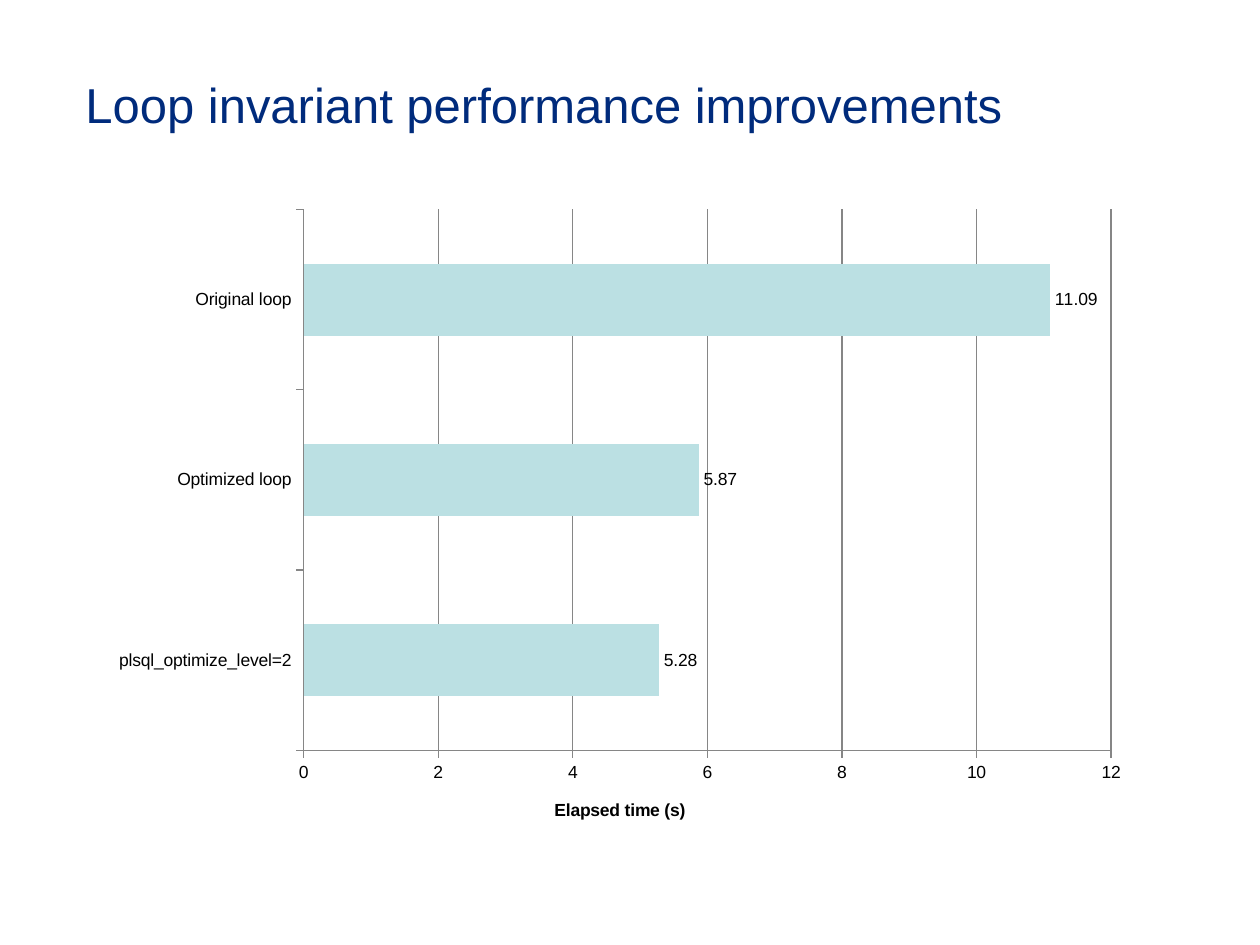
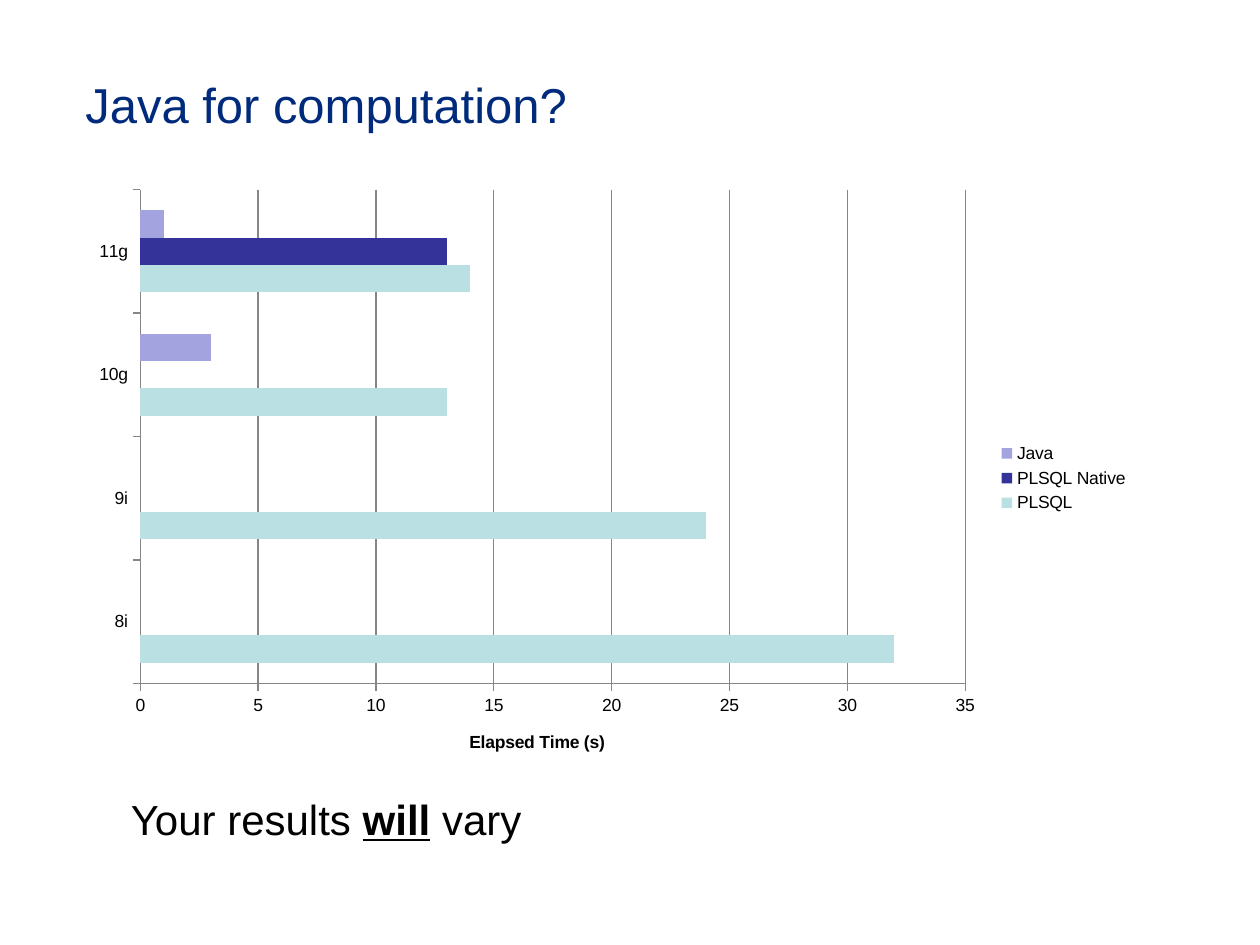
"""Build two slides of horizontal bar charts on loop and Java timings."""
from dataclasses import dataclass
from typing import Optional

from pptx import Presentation
from pptx.chart.data import CategoryChartData
from pptx.dml.color import RGBColor
from pptx.enum.chart import XL_CHART_TYPE, XL_LABEL_POSITION, XL_LEGEND_POSITION, XL_TICK_MARK
from pptx.enum.text import MSO_ANCHOR
from pptx.util import Inches, Pt

BAR_CLUSTERED = XL_CHART_TYPE.BAR_CLUSTERED
OUTSIDE_END = XL_LABEL_POSITION.OUTSIDE_END
LEGEND_RIGHT = XL_LEGEND_POSITION.RIGHT
TICK_OUTSIDE = XL_TICK_MARK.OUTSIDE
ANCHOR_TOP = MSO_ANCHOR.TOP

FONT = "Arial"
COLORS = {
    "title": "002B7C",
    "text": "000000",
    "axis": "868686",
    "aqua": "BBE0E3",
    "navy": "333399",
    "lilac": "A3A3E0",
}


@dataclass(frozen=True)
class Box:
    left: float
    top: float
    width: float
    height: float

    def lengths(self) -> tuple:
        return tuple(Inches(v) for v in (self.left, self.top, self.width, self.height))


@dataclass(frozen=True)
class Run:
    text: str
    emphasized: bool = False


@dataclass(frozen=True)
class Timing:
    name: str
    seconds: tuple[Optional[float], ...]
    color: str


@dataclass(frozen=True)
class TimingChart:
    box: Box
    axis_title: str
    categories: tuple[str, ...]
    timings: tuple[Timing, ...]
    value_step: int
    value_max: int
    labelled: bool = False
    legend: bool = False


@dataclass(frozen=True)
class TimingSlide:
    title: str
    chart: TimingChart
    remark: tuple[Run, ...] = ()


TITLE_BOX = Box(0.58, 0.5, 8.5, 0.92)
REMARK_BOX = Box(0.94, 6.25, 6.17, 0.5)

SLIDES = (
    TimingSlide(
        "Loop invariant performance improvements",
        TimingChart(
            Box(0.78, 1.56, 8.28, 5.16),
            "Elapsed time (s)",
            ("plsql_optimize_level=2", "Optimized loop", "Original loop"),
            (Timing("Series 1", (5.28, 5.87, 11.09), "aqua"),),
            value_step=2,
            value_max=12,
            labelled=True,
        ),
    ),
    TimingSlide(
        "Java for computation?",
        TimingChart(
            Box(0.62, 1.41, 8.44, 4.77),
            "Elapsed Time (s)",
            ("8i", "9i", "10g", "11g"),
            (
                Timing("PLSQL", (32, 24, 13, 14), "aqua"),
                Timing("PLSQL Native", (None, None, None, 13), "navy"),
                Timing("Java", (None, None, 3, 1), "lilac"),
            ),
            value_step=5,
            value_max=35,
            legend=True,
        ),
        (Run("Your results "), Run("will", True), Run(" vary")),
    ),
)


def rgb(color: str) -> RGBColor:
    return RGBColor.from_string(COLORS[color])


def style_font(font, size: float, color: str, bold: bool = False) -> None:
    font.name = FONT
    font.size = Pt(size)
    font.bold = bold
    font.color.rgb = rgb(color)


def add_text(slide, box: Box, runs: tuple[Run, ...], size: float, color: str,
             inset: float) -> None:
    frame = slide.shapes.add_textbox(*box.lengths()).text_frame
    frame.word_wrap = True
    frame.vertical_anchor = ANCHOR_TOP
    frame.margin_top = Inches(inset)
    for part in runs:
        run = frame.paragraphs[0].add_run()
        run.text = part.text
        style_font(run.font, size, color, part.emphasized)
        run.font.underline = part.emphasized


def style_line(line) -> None:
    line.color.rgb = rgb("axis")
    line.width = Pt(0.75)


def add_timing_chart(slide, content: TimingChart) -> None:
    data = CategoryChartData()
    data.categories = content.categories
    for timing in content.timings:
        data.add_series(timing.name, timing.seconds)
    chart = slide.shapes.add_chart(BAR_CLUSTERED, *content.box.lengths(), data).chart
    style_font(chart.font, 10, "text")
    chart.has_title = False

    for axis in (chart.category_axis, chart.value_axis):
        axis.major_tick_mark = TICK_OUTSIDE
        style_line(axis.format.line)
    elapsed = chart.value_axis
    elapsed.minimum_scale = 0
    elapsed.maximum_scale = content.value_max
    elapsed.major_unit = content.value_step
    elapsed.has_major_gridlines = True
    style_line(elapsed.major_gridlines.format.line)
    caption = elapsed.axis_title.text_frame.paragraphs[0].add_run()
    caption.text = content.axis_title
    style_font(caption.font, 10, "text", bold=True)

    plot = chart.plots[0]
    plot.gap_width = 150
    plot.vary_by_categories = False
    for series, timing in zip(plot.series, content.timings):
        series.format.fill.solid()
        series.format.fill.fore_color.rgb = rgb(timing.color)
    if content.labelled:
        plot.has_data_labels = True
        plot.data_labels.show_value = True
        plot.data_labels.position = OUTSIDE_END
        style_font(plot.data_labels.font, 10, "text")
    chart.has_legend = content.legend
    if content.legend:
        chart.legend.position = LEGEND_RIGHT
        chart.legend.include_in_layout = False
        style_font(chart.legend.font, 10, "text")


def main() -> None:
    deck = Presentation()
    deck.slide_width = Inches(10)
    deck.slide_height = Inches(7.5)
    blank = deck.slide_layouts[6]
    for content in SLIDES:
        slide = deck.slides.add_slide(blank)
        add_text(slide, TITLE_BOX, (Run(content.title),), 28, "title", inset=0.09)
        if content.remark:
            add_text(slide, REMARK_BOX, content.remark, 24, "text", inset=0.05)
        add_timing_chart(slide, content.chart)
    deck.save("out.pptx")


if __name__ == "__main__":
    main()
